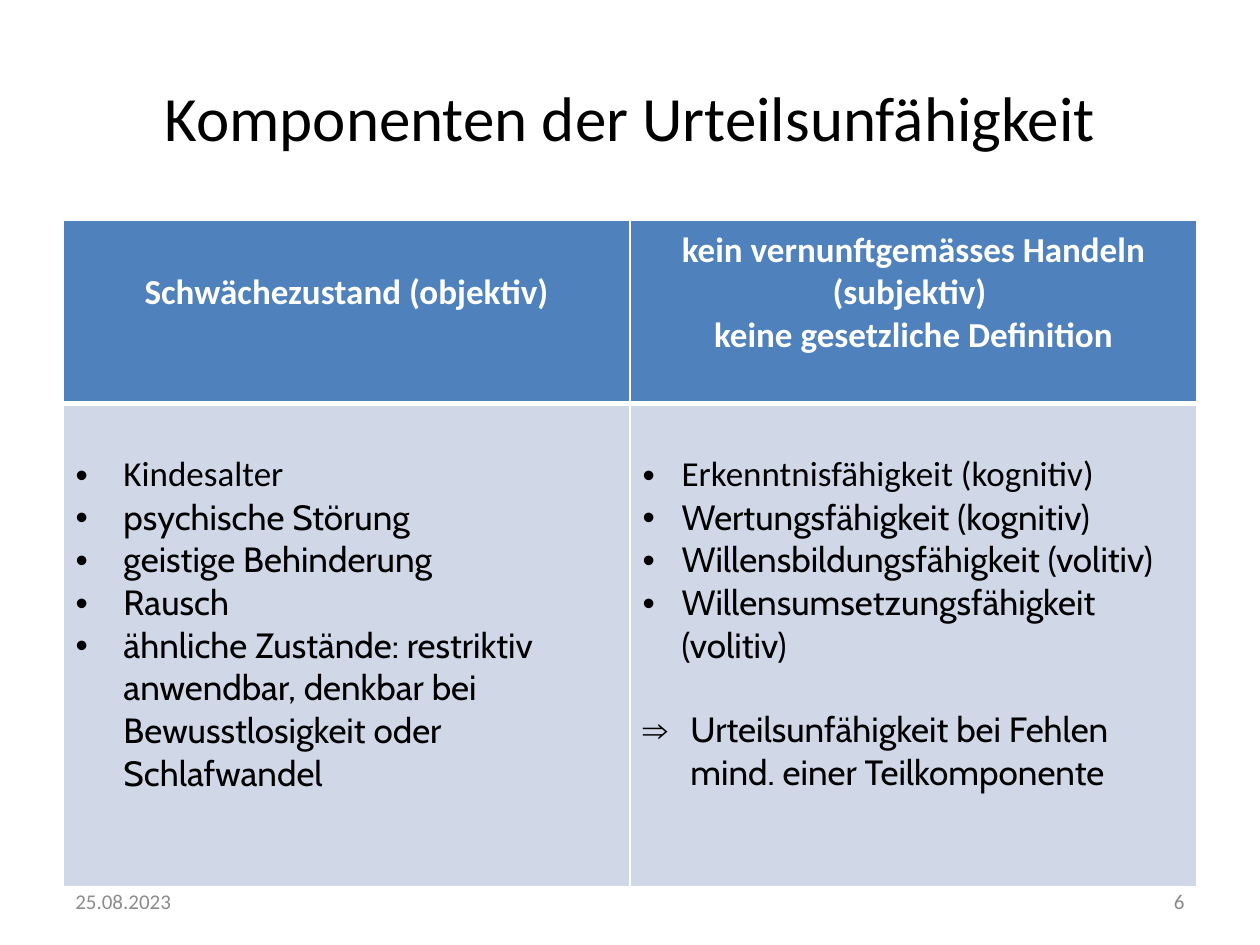
"""Builds a slide with a two-column table on the components of incapacity of judgement."""
import pptx
import pptx.dml.color
import pptx.enum.text
import pptx.oxml.ns
import pptx.util
from lxml import etree

Inches = pptx.util.Inches
Pt = pptx.util.Pt
ALIGN = pptx.enum.text.PP_ALIGN
MIDDLE = pptx.enum.text.MSO_ANCHOR.MIDDLE

COLORS = {"header": "4F81BD", "body": "D0D8E8", "white": "FFFFFF",
          "black": "000000", "date": "8C8C8C", "number": "898989"}
WIDTH, HEIGHT = Inches(10), Inches(7.5)
MARGIN = 0.05 * WIDTH
CONTENT_WIDTH = WIDTH - 2 * MARGIN
FOOTER_WIDTH = Inches(2.33)
ROW_HEIGHTS = (1.45, 3.84)

HEADERS = (
    ("Schwächezustand (objektiv)",),
    ("kein vernunftgemässes Handeln (subjektiv) ", "keine gesetzliche Definition"),
)
WEAKNESSES = (
    "Kindesalter",
    "psychische Störung",
    "geistige Behinderung",
    "Rausch",
    "ähnliche Zustände: restriktiv anwendbar, denkbar bei Bewusstlosigkeit oder Schlafwandel",
)
ABILITIES = (
    "Erkenntnisfähigkeit (kognitiv)",
    "Wertungsfähigkeit (kognitiv)",
    "Willensbildungsfähigkeit (volitiv)",
    "Willensumsetzungsfähigkeit (volitiv)",
)
CONCLUSION = "Urteilsunfähigkeit bei Fehlen mind. einer Teilkomponente"


def format_runs(paragraph, size, color, name="Calibri", bold=False):
    for run in paragraph.runs:
        run.font.size = Pt(size)
        run.font.name = name
        run.font.bold = bold
        run.font.color.rgb = pptx.dml.color.RGBColor.from_string(COLORS[color])


def set_bullet(paragraph, character, indent):
    properties = paragraph._p.get_or_add_pPr()
    properties.set("marL", str(Inches(indent)))
    properties.set("indent", str(-Inches(indent)))
    for tag, key, value in (("a:buFont", "typeface", "Arial"), ("a:buChar", "char", character)):
        etree.SubElement(properties, pptx.oxml.ns.qn(tag)).set(key, value)


def style_cell(cell, fill, top_width, bottom_width):
    properties = cell._tc.get_or_add_tcPr()
    for side, width in (("L", 1), ("R", 1), ("T", top_width), ("B", bottom_width)):
        line = etree.SubElement(properties, pptx.oxml.ns.qn(f"a:ln{side}"), w=str(Pt(width)))
        solid = etree.SubElement(line, pptx.oxml.ns.qn("a:solidFill"))
        etree.SubElement(solid, pptx.oxml.ns.qn("a:srgbClr"), val=COLORS["white"])
    cell.fill.solid()
    cell.fill.fore_color.rgb = pptx.dml.color.RGBColor.from_string(COLORS[fill])


def fill_header(cell, lines):
    style_cell(cell, "header", 1, 3)
    cell.vertical_anchor = MIDDLE
    cell.margin_bottom = Inches(0.35)
    cell.text_frame.text = "\n".join(lines)
    for paragraph in cell.text_frame.paragraphs:
        paragraph.alignment = ALIGN.CENTER
        format_runs(paragraph, 20, "white", bold=True)


def fill_body(cell, items, indent):
    style_cell(cell, "body", 3, 1)
    cell.margin_top = Inches(0.4)
    cell.text_frame.text = "\n".join(items)
    for index, paragraph in enumerate(cell.text_frame.paragraphs):
        set_bullet(paragraph, "•", indent)
        format_runs(paragraph, 20, "black", "Cabin" if index else "Calibri")


def add_conclusion(cell):
    paragraph = cell.text_frame.add_paragraph()
    paragraph.text = CONCLUSION
    paragraph.space_before = Pt(24)
    set_bullet(paragraph, "⇒", 0.38)
    format_runs(paragraph, 20, "black", "Cabin")


def add_title(slide, text):
    title = slide.shapes.title
    title.left, title.top = int(MARGIN), Inches(0.3)
    title.width, title.height = int(CONTENT_WIDTH), Inches(1.25)
    title.text_frame.text = text
    title.text_frame.vertical_anchor = MIDDLE
    paragraph = title.text_frame.paragraphs[0]
    paragraph.alignment = ALIGN.CENTER
    format_runs(paragraph, 36, "black")


def add_components_table(slide):
    table = slide.shapes.add_table(2, 2, int(MARGIN), Inches(1.75), int(CONTENT_WIDTH),
                                   Inches(sum(ROW_HEIGHTS))).table
    for row, height in zip(table.rows, ROW_HEIGHTS):
        row.height = Inches(height)
    for column, lines in enumerate(HEADERS):
        fill_header(table.cell(0, column), lines)
    fill_body(table.cell(1, 0), WEAKNESSES, 0.38)
    fill_body(table.cell(1, 1), ABILITIES, 0.31)
    add_conclusion(table.cell(1, 1))


def add_footer(slide, text, left, alignment, color):
    box = slide.shapes.add_textbox(int(left), Inches(6.95), FOOTER_WIDTH, Inches(0.4))
    box.text_frame.word_wrap = True
    box.text_frame.vertical_anchor = MIDDLE
    box.text_frame.text = text
    paragraph = box.text_frame.paragraphs[0]
    paragraph.alignment = alignment
    format_runs(paragraph, 12, color)


def main():
    presentation = pptx.Presentation()
    presentation.slide_width, presentation.slide_height = WIDTH, HEIGHT
    slide = presentation.slides.add_slide(presentation.slide_layouts[5])
    add_title(slide, "Komponenten der Urteilsunfähigkeit")
    add_components_table(slide)
    add_footer(slide, "25.08.2023", MARGIN, ALIGN.LEFT, "date")
    add_footer(slide, "6", WIDTH - MARGIN - FOOTER_WIDTH, ALIGN.RIGHT, "number")
    presentation.save("out.pptx")


if __name__ == "__main__":
    main()
